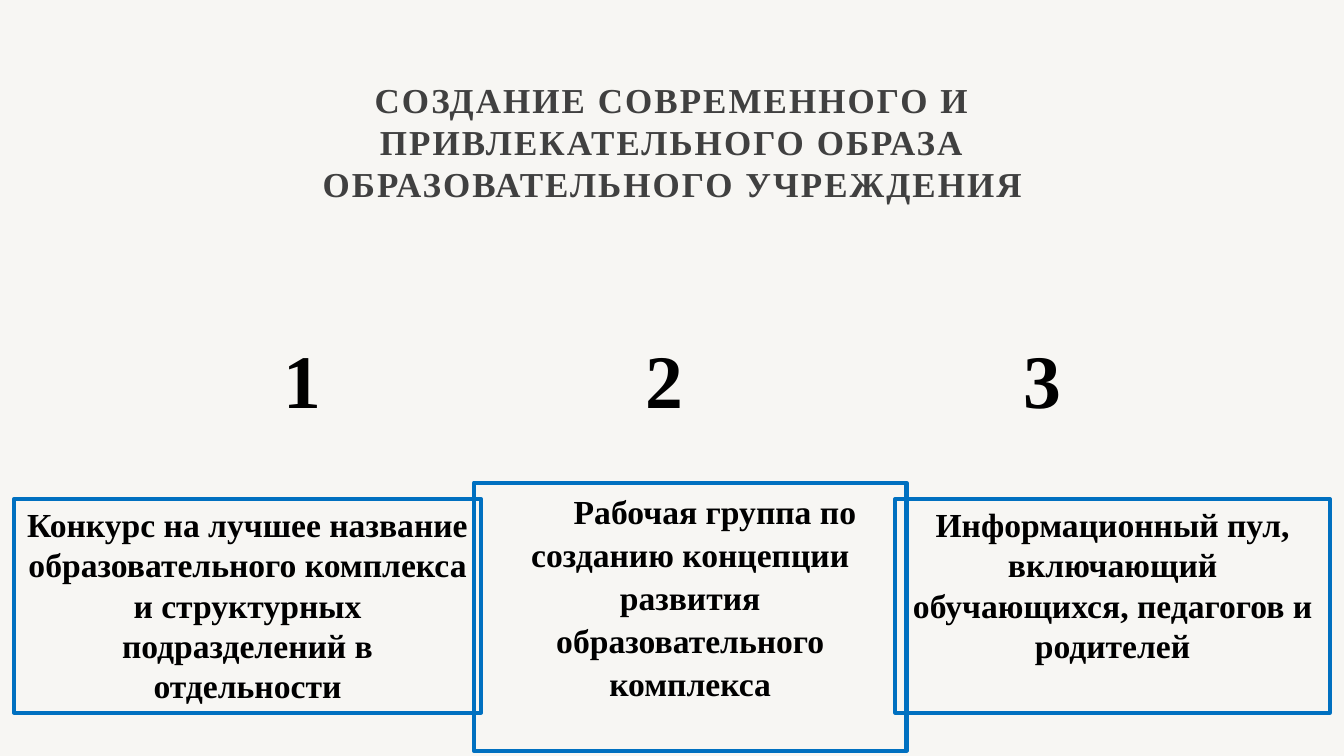
"""Builds the slide on the image of an educational institution."""
import dataclasses

import pptx
import pptx.dml.color
import pptx.enum.shapes
import pptx.enum.text
import pptx.util

Inches = pptx.util.Inches
Align = pptx.enum.text.PP_ALIGN
Anchor = pptx.enum.text.MSO_ANCHOR


@dataclasses.dataclass(frozen=True)
class Theme:
    """Colours and type sizes of the slide."""
    font: str = "Times New Roman"
    background: str = "F7F6F3"
    title_colour: str = "404040"
    text_colour: str = "000000"
    frame_colour: str = "0070C0"
    title_size: int = 25
    number_size: int = 54
    body_size: int = 24
    frame_width: int = 3


class SlideBuilder:
    """Adds styled elements to the current slide."""

    def __init__(self, slide, theme):
        self.slide = slide
        self.theme = theme
        fill = slide.background.fill
        fill.solid()
        fill.fore_color.rgb = self.colour(theme.background)

    def colour(self, value):
        return pptx.dml.color.RGBColor.from_string(value)

    def set_text(self, shape, text, size, colour, alignment, anchor=Anchor.TOP, wrap=True):
        frame = shape.text_frame
        frame.auto_size = pptx.enum.text.MSO_AUTO_SIZE.NONE
        frame.word_wrap = wrap
        frame.vertical_anchor = anchor
        frame.text = text
        paragraph = frame.paragraphs[0]
        paragraph.alignment = alignment
        paragraph.font.name = self.theme.font
        paragraph.font.size = pptx.util.Pt(size)
        paragraph.font.bold = True
        paragraph.font.color.rgb = self.colour(colour)
        return paragraph

    def title(self, text, left, top, width, height):
        shape = self.slide.shapes.title
        shape.left, shape.top = Inches(left), Inches(top)
        shape.width, shape.height = Inches(width), Inches(height)
        paragraph = self.set_text(shape, text, self.theme.title_size,
                                  self.theme.title_colour, Align.CENTER, Anchor.MIDDLE)
        paragraph.runs[0]._r.get_or_add_rPr().set("spc", "150")

    def number(self, text, left, top):
        shape = self.slide.shapes.add_textbox(
            Inches(left), Inches(top), Inches(0.58), Inches(1.01))
        self.set_text(shape, text, self.theme.number_size,
                      self.theme.text_colour, Align.LEFT, wrap=False)

    def framed_text(self, text, left, top, width, height, indent, line_spacing):
        shape = self.slide.shapes.add_shape(
            pptx.enum.shapes.MSO_SHAPE.RECTANGLE,
            Inches(left), Inches(top), Inches(width), Inches(height))
        shape.shadow.inherit = False
        shape.fill.background()
        shape.line.color.rgb = self.colour(self.theme.frame_colour)
        shape.line.width = pptx.util.Pt(self.theme.frame_width)
        paragraph = self.set_text(shape, text, self.theme.body_size,
                                  self.theme.text_colour, Align.CENTER)
        paragraph.line_spacing = line_spacing
        paragraph._p.get_or_add_pPr().set("indent", str(Inches(indent)))


def main():
    presentation = pptx.Presentation()
    presentation.slide_width = Inches(13.33)
    presentation.slide_height = Inches(7.5)
    slide = presentation.slides.add_slide(presentation.slide_layouts[5])
    builder = SlideBuilder(slide, Theme())

    builder.title("СОЗДАНИЕ СОВРЕМЕННОГО И ПРИВЛЕКАТЕЛЬНОГО ОБРАЗА "
                  "ОБРАЗОВАТЕЛЬНОГО УЧРЕЖДЕНИЯ", 1.79, 0.72, 9.76, 1.36)

    for number, left in enumerate((2.71, 6.3, 10.05), start=1):
        builder.number(str(number), left, 3.25)

    steps = (
        ("Конкурс на лучшее название образовательного комплекса "
         "и структурных подразделений в отдельности", 0.14, 4.95, 4.63, 2.12, 0, 1.0),
        ("Рабочая группа по созданию концепции развития "
         "образовательного комплекса", 4.7, 4.79, 4.29, 2.66, 0.49, 1.07),
        ("Информационный пул, включающий обучающихся, "
         "педагогов и родителей", 8.88, 4.95, 4.31, 2.12, 0, 1.0),
    )
    for step in steps:
        builder.framed_text(*step)

    presentation.save("out.pptx")


if __name__ == "__main__":
    main()
